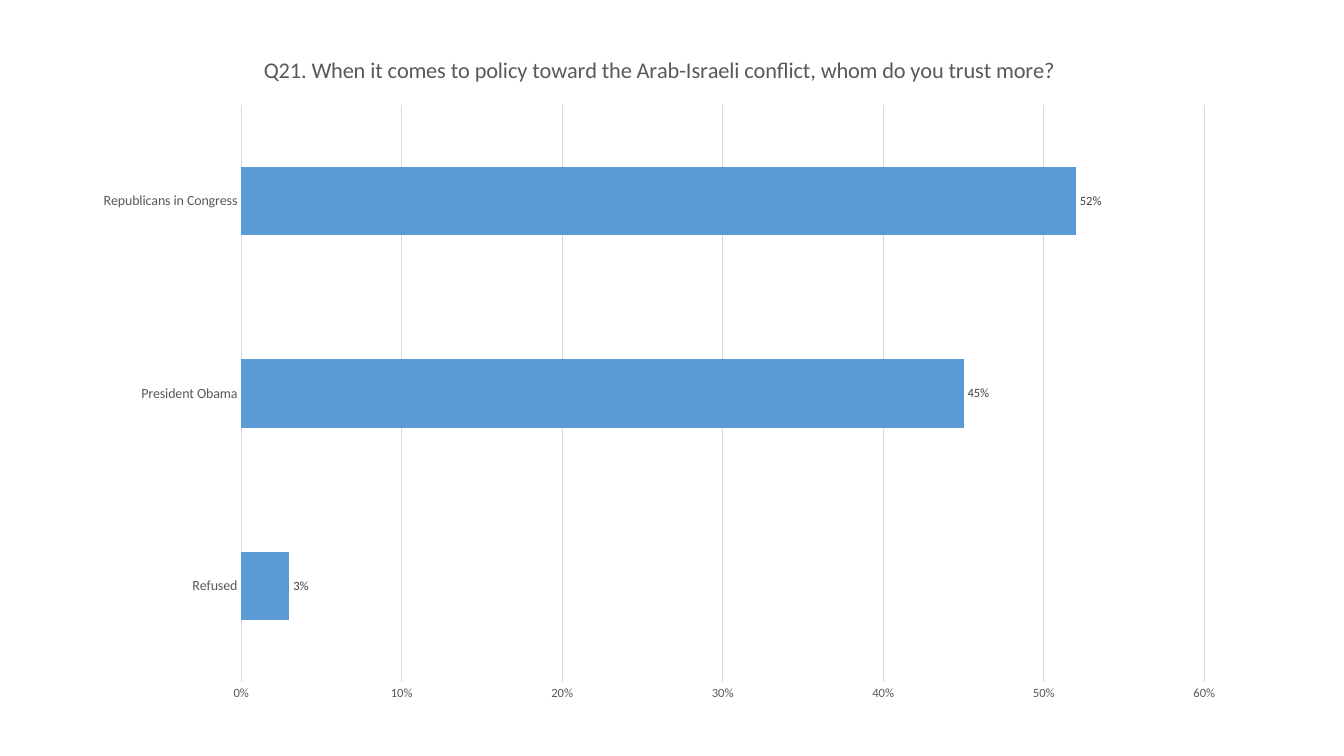
from pptx import Presentation
from pptx.chart.data import CategoryChartData
from pptx.dml.color import RGBColor
from pptx.enum.chart import XL_CHART_TYPE as ChartType
from pptx.enum.chart import XL_LABEL_POSITION as LabelPosition
from pptx.enum.chart import XL_TICK_MARK as TickMark
from pptx.util import Cm, Pt

BLACK = RGBColor(0x00, 0x00, 0x00)
DARK_GREY = RGBColor(0x40, 0x40, 0x40)
GREY = RGBColor(0x59, 0x59, 0x59)
LIGHT_GREY = RGBColor(0xD9, 0xD9, 0xD9)
BLUE = RGBColor(0x5B, 0x9B, 0xD5)

QUESTION = ("Q21. When it comes to policy toward the Arab-Israeli conflict, "
            "whom do you trust more?")
ANSWERS = {"Refused": 0.03, "President Obama": 0.45, "Republicans in Congress": 0.52}


class PollSlide:
    font_name = "Calibri"
    percent = "0%"

    def __init__(self, presentation):
        blank_layout = presentation.slide_layouts[6]
        self.slide = presentation.slides.add_slide(blank_layout)

    def style_font(self, font, size, color):
        font.name = self.font_name
        font.size = Pt(size)
        font.bold = False
        font.color.rgb = color

    def style_line(self, line):
        line.color.rgb = LIGHT_GREY
        line.width = Pt(0.75)

    def add_bar_chart(self, question, answers, left, top, width, height):
        poll = CategoryChartData(number_format=self.percent)
        poll.categories = list(answers)
        poll.add_series("Series 1", list(answers.values()))
        chart = self.slide.shapes.add_chart(
            ChartType.BAR_CLUSTERED, left, top, width, height, poll).chart
        self.style_font(chart.font, 10, BLACK)
        chart.has_legend = False
        self.format_title(chart, question)
        self.format_axes(chart)
        self.format_bars(chart.plots[0])

    def format_title(self, chart, question):
        chart.has_title = True
        title = chart.chart_title.text_frame
        title.text = question
        self.style_font(title.paragraphs[0].font, 16, GREY)

    def format_axes(self, chart):
        answer_axis, share_axis = chart.category_axis, chart.value_axis
        for axis, size in ((answer_axis, 10), (share_axis, 9)):
            axis.major_tick_mark = axis.minor_tick_mark = TickMark.NONE
            self.style_font(axis.tick_labels.font, size, GREY)
        self.style_line(answer_axis.format.line)
        share_axis.format.line.fill.background()
        self.style_line(share_axis.major_gridlines.format.line)
        share_axis.minimum_scale = 0
        share_axis.maximum_scale = 0.6
        share_axis.major_unit = 0.1
        share_axis.tick_labels.number_format = self.percent
        share_axis.tick_labels.number_format_is_linked = False

    def format_bars(self, plot):
        plot.gap_width = 182
        plot.vary_by_categories = False
        bars = plot.series[0]
        bars.format.fill.solid()
        bars.format.fill.fore_color.rgb = BLUE
        labels = bars.data_labels
        labels.show_value = True
        labels.number_format = self.percent
        labels.number_format_is_linked = False
        labels.position = LabelPosition.OUTSIDE_END
        self.style_font(labels.font, 9, DARK_GREY)


def main():
    presentation = Presentation()
    presentation.slide_width = Cm(33.87)
    presentation.slide_height = Cm(19.05)
    poll_slide = PollSlide(presentation)
    poll_slide.add_bar_chart(QUESTION, ANSWERS, Cm(2.03), Cm(0.79), Cm(29.18), Cm(17.22))
    presentation.save("out.pptx")


if __name__ == "__main__":
    main()
